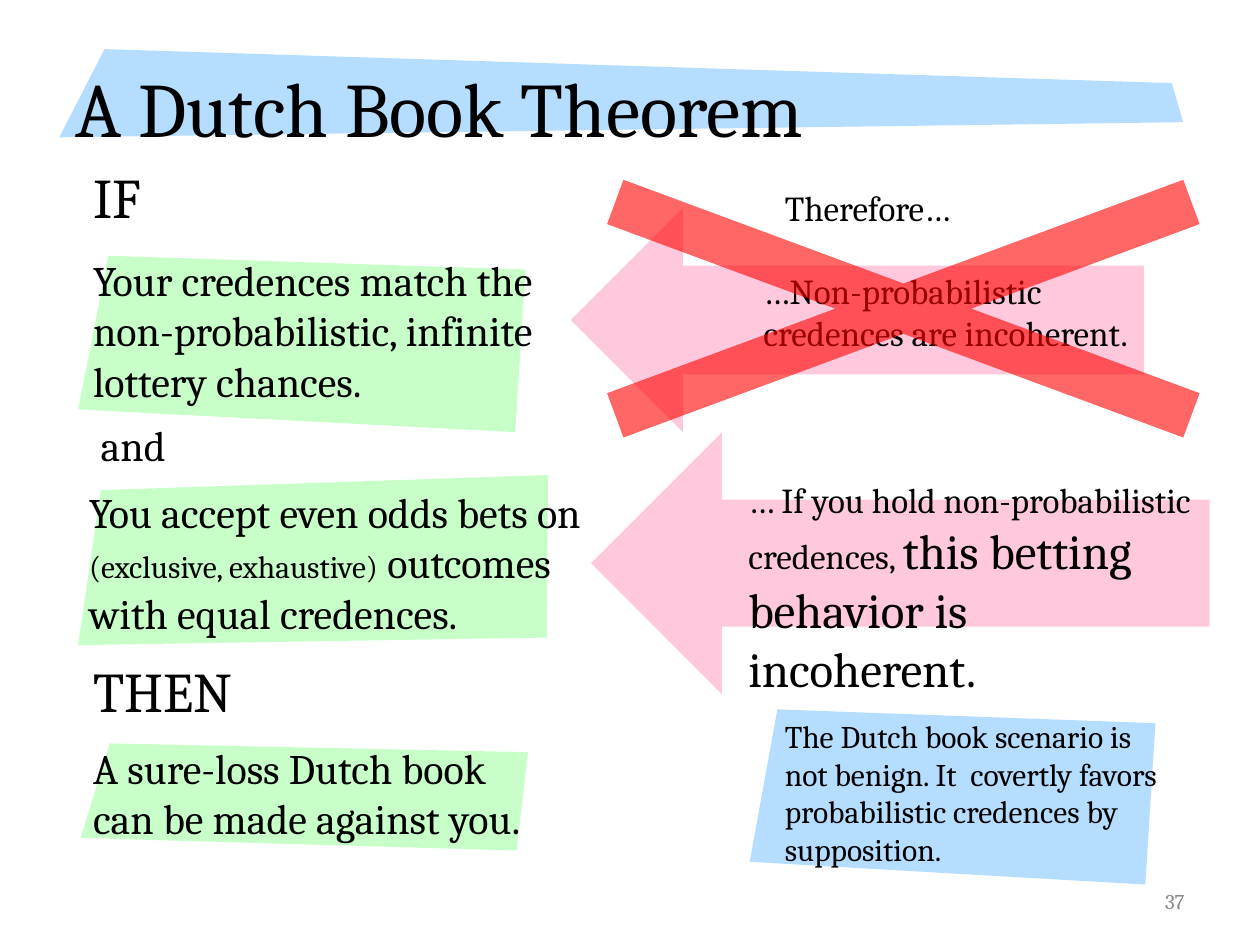
"""Build the Dutch book theorem slide."""
from dataclasses import dataclass
from typing import Any

from lxml import etree
from pptx import Presentation, util as u
from pptx.dml.color import RGBColor
from pptx.enum import shapes, text
from pptx.oxml import ns

FONT, BLACK, GREY = "Cambria", "000000", "898989"
GREEN, BLUE, PINK, RED = "C8FFC8", "B4DDFF", "FFC8DC", "FF0000"


@dataclass(frozen=True)
class Panel:
    """A filled quadrilateral given by its corners."""
    corners: tuple[tuple[float, float], ...]
    color: str = GREEN


@dataclass(frozen=True)
class Label:
    """A text box made of (wording, size) spans."""
    place: tuple[float, float, float, float]
    spans: tuple[tuple[str, int], ...]
    wrap: bool = True


@dataclass(frozen=True)
class Symbol:
    """A preset shape with its adjustments."""
    kind: shapes.MSO_SHAPE
    place: tuple[float, float, float, float]
    adjustments: tuple[float, ...]
    color: str = PINK


def rgb(color: str) -> RGBColor:
    """Turn a hex string into a colour."""
    return RGBColor.from_string(color)


def assign(target: Any, values: dict[str, Any]) -> None:
    """Set each named attribute on the target."""
    for name, value in values.items():
        setattr(target, name, value)


def paint(shape: Any, color: str) -> Any:
    """Give a shape a flat fill without line or shadow."""
    shape.shadow.inherit = False
    shape.fill.solid()
    shape.fill.fore_color.rgb = rgb(color)
    shape.line.fill.background()
    return shape


def draw_panel(canvas: Any, panel: Panel) -> Any:
    """Draw a quadrilateral panel."""
    start, *others = [(u.Inches(x), u.Inches(y)) for x, y in panel.corners]
    builder = canvas.build_freeform(*start)
    builder.add_line_segments(others, close=True)
    return paint(builder.convert_to_shape(), panel.color)


def draw_symbol(canvas: Any, symbol: Symbol) -> Any:
    """Draw a preset shape."""
    shape = canvas.add_shape(symbol.kind, *map(u.Inches, symbol.place))
    for index, value in enumerate(symbol.adjustments):
        shape.adjustments[index] = value
    return paint(shape, symbol.color)


def write_spans(para: Any, spans: tuple[tuple[str, int], ...], color: str = BLACK) -> None:
    """Add formatted spans to a paragraph."""
    for wording, size in spans:
        span = para.add_run()
        span.text = wording
        assign(span.font, {"name": FONT, "size": u.Pt(size)})
        span.font.color.rgb = rgb(color)


def draw_label(canvas: Any, label: Label, color: str = BLACK) -> Any:
    """Draw a text box."""
    box = canvas.add_textbox(*map(u.Inches, label.place))
    assign(box.text_frame, {"word_wrap": label.wrap,
                            "auto_size": text.MSO_AUTO_SIZE.SHAPE_TO_FIT_TEXT})
    write_spans(box.text_frame.paragraphs[0], label.spans, color)
    return box


def draw_title(page: Any, wording: str) -> None:
    """Place the title above everything drawn so far."""
    title = page.shapes.title
    places = zip(("left", "top", "width", "height"), map(u.Inches, (0.5, 0.3, 8.76, 1.1)))
    assign(title, dict(places))
    title.text_frame.vertical_anchor = text.MSO_ANCHOR.MIDDLE
    para = title.text_frame.paragraphs[0]
    para.alignment = text.PP_ALIGN.LEFT
    write_spans(para, ((wording, 44),))
    title.element.getparent().append(title.element)


def draw_number(page: Any, wording: str) -> None:
    """Draw the page number."""
    box = draw_label(page.shapes, Label((7.17, 6.95, 2.33, 0.4), ((wording, 12),)), GREY)
    assign(box.text_frame, {"auto_size": text.MSO_AUTO_SIZE.NONE,
                            "vertical_anchor": text.MSO_ANCHOR.MIDDLE})
    box.text_frame.paragraphs[0].alignment = text.PP_ALIGN.RIGHT


def set_opacity(shape: Any, percent: int) -> None:
    """Make a solid fill partly transparent."""
    color = shape.element.spPr.find(ns.qn("a:solidFill"))[0]
    etree.SubElement(color, ns.qn("a:alpha")).set("val", str(percent * 1000))


PANELS = (
    Panel(((0.86, 2.03), (4.17, 2.14), (4.09, 3.43), (0.62, 3.25))),
    Panel(((0.8, 3.89), (4.35, 3.77), (4.34, 5.06), (0.62, 5.12))),
    Panel(((0.87, 5.9), (4.19, 5.97), (4.1, 6.75), (0.64, 6.65))),
    Panel(((0.83, 0.39), (9.3, 0.66), (9.39, 0.97), (0.47, 1.09)), BLUE),
)
ARGUMENT = (
    Label((0.64, 1.24, 0.61, 0.64), (("IF", 32),), False),
    Label((0.64, 1.97, 4.1, 1.31),
          (("Your credences match the non-probabilistic, infinite lottery chances.", 24),)),
    Label((0.7, 3.28, 1.08, 0.51), (("and", 24),)),
    Label((0.61, 3.81, 4.36, 1.31),
          (("You accept even odds bets on ", 24), ("(exclusive, exhaustive)", 18),
           (" outcomes with equal credences.", 24))),
    Label((0.64, 5.16, 1.4, 0.64), (("THEN", 32),), False),
    Label((0.64, 5.84, 3.81, 0.91),
          (("A sure-loss Dutch book can be made against you.", 24),)),
)
ARROW = shapes.MSO_SHAPE.LEFT_ARROW
COMMENTS = (
    (Symbol(ARROW, (4.53, 1.65, 4.55, 1.78), (0.485, 0.5)),
     Label((5.96, 2.09, 3.46, 0.77), (("…Non-probabilistic credences are incoherent.", 20),)),
     Label((6.13, 1.43, 1.59, 0.44), (("Therefore…", 20),), False)),
    (Symbol(ARROW, (4.69, 3.43, 4.91, 2.08), (0.485, 0.5)),
     Label((5.84, 3.75, 3.82, 1.38),
           (("… If you hold non-probabilistic credences, ", 20),
            ("this betting behavior is incoherent.", 28)))),
    (Panel(((6.17, 5.63), (9.17, 5.74), (9.09, 7.02), (5.95, 6.84)), BLUE),
     Label((6.13, 5.64, 3.19, 1.31),
           (("The Dutch book scenario is not benign. It  covertly favors "
             "probabilistic credences by supposition.", 18),))),
)
CROSS = Symbol(shapes.MSO_SHAPE.MATH_MULTIPLY, (2.77, 0.82, 8.8, 3.26), (0.115,), RED)
DRAWERS = {Panel: draw_panel, Label: draw_label, Symbol: draw_symbol}


def main() -> None:
    """Build and save the deck."""
    deck = Presentation()
    assign(deck, {"slide_width": u.Inches(10), "slide_height": u.Inches(7.5)})
    page = deck.slides.add_slide(deck.slide_layouts.get_by_name("Title Only"))
    for panel in PANELS:
        draw_panel(page.shapes, panel)
    draw_title(page, "A Dutch Book Theorem")
    draw_number(page, "37")
    for label in ARGUMENT:
        draw_label(page.shapes, label)
    for comment in COMMENTS:
        group = page.shapes.add_group_shape()
        for part in comment:
            DRAWERS[type(part)](group.shapes, part)
    set_opacity(draw_symbol(page.shapes, CROSS), 60)
    deck.save("out.pptx")


if __name__ == "__main__":
    main()
